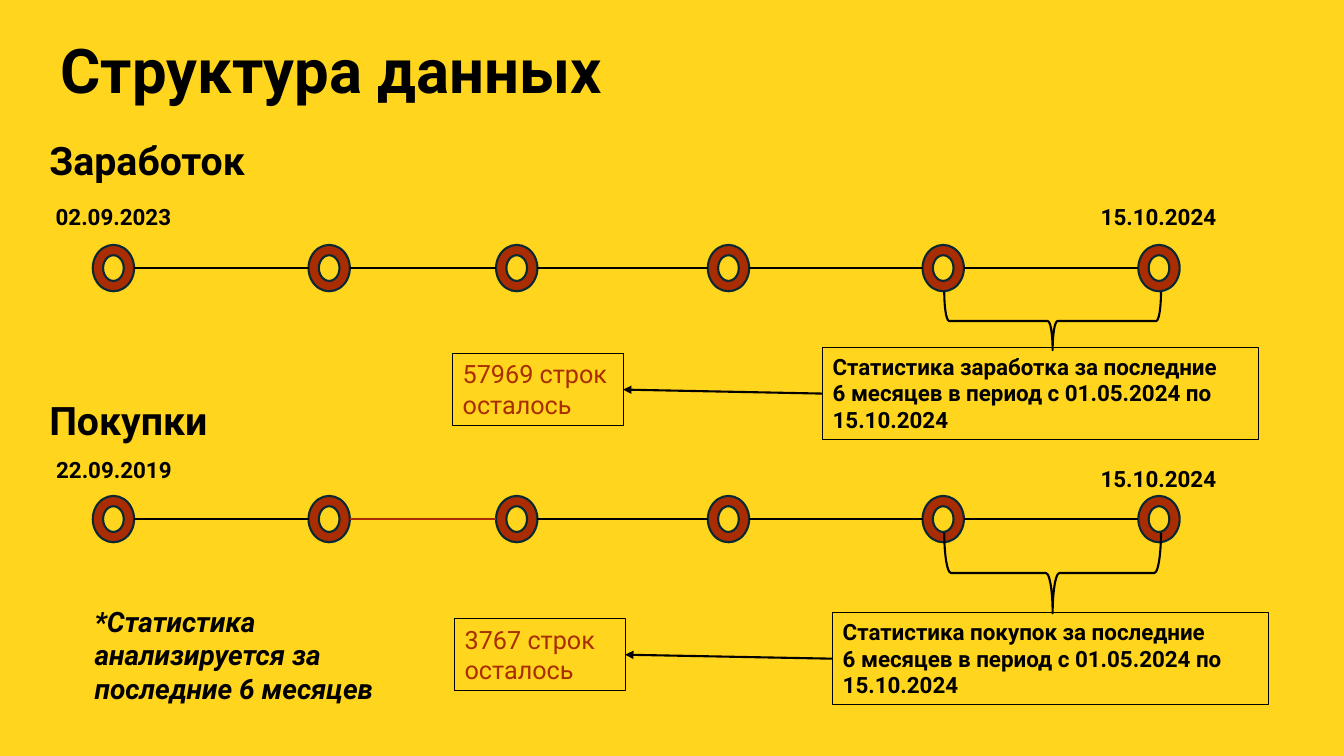
import pptx
import pptx.dml.color
import pptx.enum.shapes
import pptx.enum.text
import pptx.oxml
import pptx.util
from pptx.util import Inches

YELLOW, RED, NAVY, BLACK = "FFD51E", "A92D00", "082836", "000000"
SHAPE = pptx.enum.shapes.MSO_SHAPE
ALIGN = pptx.enum.text.PP_ALIGN
ANCHOR = pptx.enum.text.MSO_ANCHOR
AUTO_SIZE = pptx.enum.text.MSO_AUTO_SIZE

NODE_LEFTS = [0.92, 3.06, 4.92, 7.02, 9.15, 11.29]
NODE_WIDTH, NODE_HEIGHT = 0.41, 0.46

HEADING = {"size": 28, "bold": True}
DATE = {"size": 16, "bold": True}
PERIOD = {"size": 16, "bold": True}
ROW_COUNT = {"size": 18, "bold": False}
FOOTNOTE = {"size": 20, "bold": True, "italic": True}
TITLE = {"size": 44, "bold": True}


def rgb(value):
    return pptx.dml.color.RGBColor.from_string(value)


def set_line(line, color, width):
    line.color.rgb = rgb(color)
    line.width = pptx.util.Pt(width)


def write(frame, lines, font_format, color=BLACK, align=ALIGN.LEFT):
    frame.word_wrap = True
    frame.text = "\n".join(lines)
    for paragraph in frame.paragraphs:
        paragraph.alignment = align
        font = paragraph.runs[0].font
        font.name = "Roboto"
        font.color.rgb = rgb(color)
        for name, value in font_format.items():
            setattr(font, name, pptx.util.Pt(value) if name == "size" else value)


def add_label(slide, at, lines, font_format, **style):
    label = slide.shapes.add_textbox(*map(Inches, at))
    write(label.text_frame, lines, font_format, **style)
    label.text_frame.auto_size = AUTO_SIZE.SHAPE_TO_FIT_TEXT
    return label


def add_framed_label(slide, at, lines, font_format, **style):
    label = add_label(slide, at, lines, font_format, **style)
    set_line(label.line, BLACK, 0.75)
    return label


def add_outline_shape(slide, kind, at, line_color):
    shape = slide.shapes.add_shape(kind, *map(Inches, at))
    shape.shadow.inherit = False
    set_line(shape.line, line_color, 1.5)
    return shape


def add_line(slide, start, end, color=BLACK):
    line = slide.shapes.add_connector(
        pptx.enum.shapes.MSO_CONNECTOR.STRAIGHT, *map(Inches, (*start, *end)))
    set_line(line.line, color, 1.5)
    properties = line._element.spPr
    properties.append(pptx.oxml.parse_xml(
        '<a:effectLst xmlns:a="http://schemas.openxmlformats.org/drawingml/2006/main"/>'))
    return line


def add_timeline(slide, top, segment_colors):
    for left in NODE_LEFTS:
        node = add_outline_shape(
            slide, SHAPE.DONUT, (left, top, NODE_WIDTH, NODE_HEIGHT), NAVY)
        node.adjustments[0] = 0.25
        node.fill.solid()
        node.fill.fore_color.rgb = rgb(RED)
    middle = top + NODE_HEIGHT / 2
    for left, right, color in zip(NODE_LEFTS, NODE_LEFTS[1:], segment_colors):
        add_line(slide, (left + NODE_WIDTH, middle), (right, middle), color)


def add_brace(slide, at):
    """Draw a right brace turned to point down."""
    brace = add_outline_shape(slide, SHAPE.RIGHT_BRACE, at, BLACK)
    brace.rotation = 90
    brace.adjustments[0] = 0.083
    brace.adjustments[1] = 0.5
    brace.fill.background()


def add_arrow(slide, source, target):
    """Point from the left side of source to the right side of target."""
    arrow = add_line(slide, (0, 0), (1, 1))
    arrow.begin_connect(source, 1)
    arrow.end_connect(target, 3)
    line_xml = arrow.line._get_or_add_ln()
    line_xml.append(pptx.oxml.parse_xml(
        '<a:tailEnd xmlns:a="http://schemas.openxmlformats.org/drawingml/2006/main"'
        ' type="triangle"/>'))


def add_section(slide, heading, heading_top, start, end, top, segment_colors,
                brace_at, period, period_at, count, count_at):
    add_label(slide, (0.39, heading_top, 3.62, 0.57), [heading], HEADING)
    for date, at in (start, end):
        add_label(slide, at, [date], DATE, align=ALIGN.CENTER)
    add_timeline(slide, top, segment_colors)
    add_brace(slide, brace_at)
    period_box = add_framed_label(
        slide, (*period_at, 4.32, 0.91),
        [period, "6 месяцев в период с 01.05.2024 по 15.10.2024"], PERIOD)
    count_box = add_framed_label(
        slide, (*count_at, 1.69, 0.71), [count], ROW_COUNT, color=RED)
    add_arrow(slide, period_box, count_box)


def add_title(slide, text):
    title = slide.shapes.title
    title.left, title.top, title.width, title.height = map(
        Inches, (0, 0, 11.5, 1.45))
    write(title.text_frame, [text], TITLE)
    title.text_frame.vertical_anchor = ANCHOR.MIDDLE
    paragraph = title.text_frame.paragraphs[0]
    paragraph.line_spacing = 0.9
    paragraph._p.get_or_add_pPr().set("indent", str(Inches(0.5)))


def add_footnote(slide, text):
    footnote = add_label(slide, (0.34, 5.77, 3.49, 1.45), [text], FOOTNOTE)
    footnote.text_frame.auto_size = AUTO_SIZE.NONE
    footnote.text_frame.vertical_anchor = ANCHOR.MIDDLE
    footnote.text_frame.paragraphs[0]._p.get_or_add_pPr().set(
        "marL", str(Inches(0.5)))


def main():
    deck = pptx.Presentation()
    deck.slide_width, deck.slide_height = Inches(13.33), Inches(7.5)
    slide = deck.slides.add_slide(deck.slide_layouts[5])
    slide.background.fill.solid()
    slide.background.fill.fore_color.rgb = rgb(YELLOW)

    add_title(slide, "Структура данных")
    add_section(
        slide, "Заработок", 1.3,
        ("02.09.2023", (0.2, 1.97, 1.85, 0.37)),
        ("15.10.2024", (10.7, 1.97, 1.58, 0.37)),
        2.43, [BLACK] * 5, (10.15, 2.11, 0.58, 2.15),
        "Статистика заработка за последние", (8.16, 3.45),
        "57969 строк осталось", (4.49, 3.51))
    add_section(
        slide, "Покупки", 3.88,
        ("22.09.2019", (0.34, 4.48, 1.58, 0.37)),
        ("15.10.2024", (10.71, 4.57, 1.56, 0.37)),
        4.92, [BLACK, RED, BLACK, BLACK, BLACK], (10.04, 4.61, 0.8, 2.15),
        "Статистика покупок за последние", (8.26, 6.08),
        "3767 строк осталось", (4.51, 6.14))
    add_footnote(slide, "*Статистика анализируется за последние 6 месяцев")

    deck.save("out.pptx")


if __name__ == "__main__":
    main()
